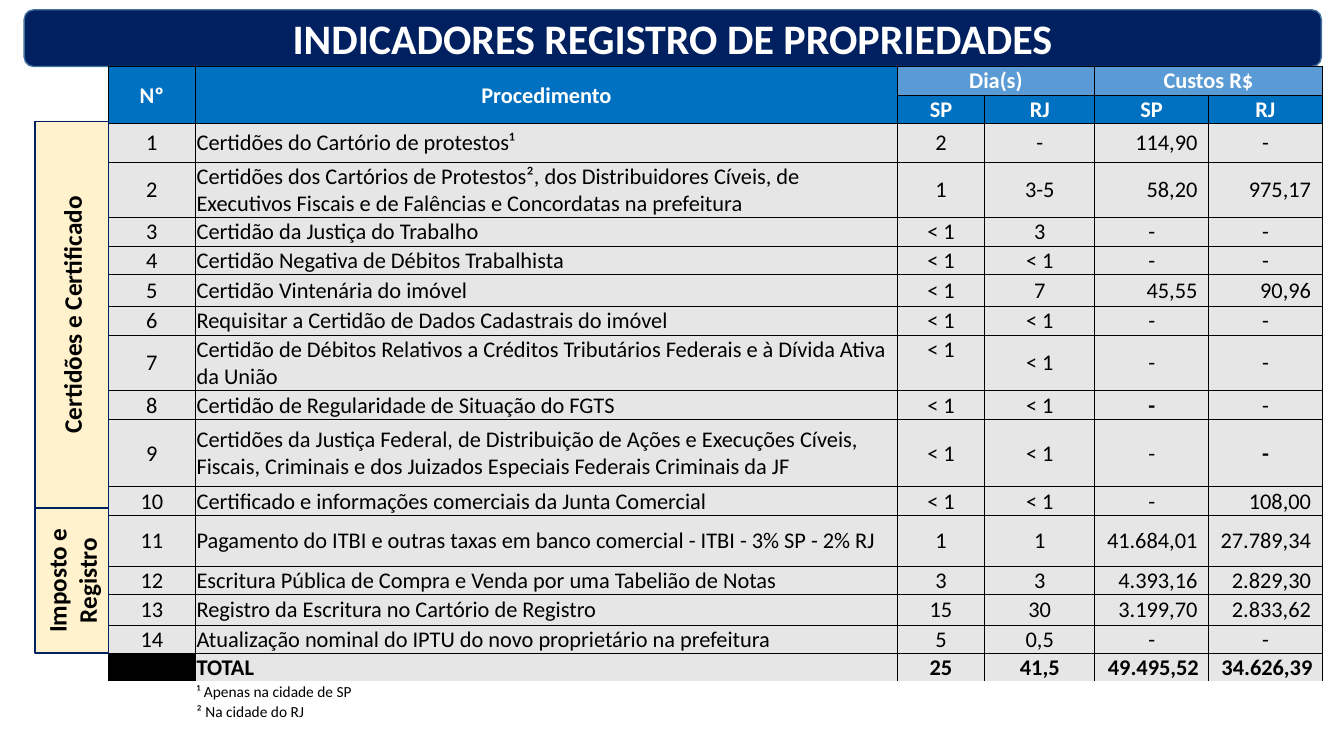
from lxml import etree
from pptx import Presentation
from pptx.dml.color import RGBColor
from pptx.enum.shapes import MSO_SHAPE
from pptx.enum.text import MSO_ANCHOR, PP_ALIGN
from pptx.oxml.ns import qn
from pptx.util import Pt

NAVY = RGBColor(0x00, 0x20, 0x60)
STEEL = RGBColor(0x43, 0x73, 0x9E)
BLUE = RGBColor(0x00, 0x70, 0xC0)
LIGHT_BLUE = RGBColor(0x5B, 0x9B, 0xD5)
GREY = RGBColor(0xE7, 0xE6, 0xE6)
CREAM = RGBColor(0xFF, 0xF2, 0xCC)
BLACK = RGBColor(0x00, 0x00, 0x00)
WHITE = RGBColor(0xFF, 0xFF, 0xFF)
FONT = "Calibri"

COLUMN_WIDTHS = [62.6, 501.1, 62.6, 78.5, 81.4, 81.1]
LINE = 19.65  # height of a row with one line of text
NOTE = 13.7
ROW_HEIGHTS = [LINE, LINE, 27.5, 39.3, LINE, LINE, 23, LINE, 39.3, LINE, 48.3,
               20.2, 36.3, LINE, 22, LINE, LINE, NOTE, NOTE]

# Procedure, days in SP and RJ, costs in SP and RJ
PROCEDURES = [
    ("Certidões do Cartório de protestos¹", "2", "-", "114,90", "-"),
    ("Certidões dos Cartórios de Protestos², dos Distribuidores Cíveis, de "
     "Executivos Fiscais e de Falências e Concordatas na prefeitura",
     "1", "3-5", "58,20", "975,17"),
    ("Certidão da Justiça do Trabalho", "< 1", "3", "-", "-"),
    ("Certidão Negativa de Débitos Trabalhista", "< 1", "< 1", "-", "-"),
    ("Certidão Vintenária do imóvel", "< 1", "7", "45,55", "90,96"),
    ("Requisitar a Certidão de Dados Cadastrais do imóvel", "< 1", "< 1", "-", "-"),
    ("Certidão de Débitos Relativos a Créditos Tributários Federais e à "
     "Dívida Ativa da União", "< 1", "< 1", "-", "-"),
    ("Certidão de Regularidade de Situação do FGTS", "< 1", "< 1", "-", "-"),
    ("Certidões da Justiça Federal, de Distribuição de Ações e Execuções "
     "Cíveis, Fiscais, Criminais e dos Juizados Especiais Federais Criminais da JF",
     "< 1", "< 1", "-", "-"),
    ("Certificado e informações comerciais da Junta Comercial",
     "< 1", "< 1", "-", "108,00"),
    ("Pagamento do ITBI e outras taxas em banco comercial - ITBI - 3% SP - 2% RJ",
     "1", "1", "41.684,01", "27.789,34"),
    ("Escritura Pública de Compra e Venda por uma Tabelião de Notas",
     "3", "3", "4.393,16", "2.829,30"),
    ("Registro da Escritura no Cartório de Registro",
     "15", "30", "3.199,70", "2.833,62"),
    ("Atualização nominal do IPTU do novo proprietário na prefeitura",
     "5", "0,5", "-", "-"),
]
TOTAL = ("TOTAL", "25", "41,5", "49.495,52", "34.626,39")
NOTES = ["¹ Apenas na cidade de SP", "² Na cidade do RJ"]
BOLD_DASHES = {(9, 4), (10, 5)}
TOP_CELL = (8, 2)


def write_text(text_frame, text, size, color, bold, alignment=PP_ALIGN.CENTER):
    text_frame.text = text
    paragraph = text_frame.paragraphs[0]
    paragraph.alignment = alignment
    for run in paragraph.runs:
        run.font.name = FONT
        run.font.size = Pt(size)
        run.font.bold = bold
        run.font.color.rgb = color


def add_box(slide, kind, bounds, fill, line, text, size, color, vertical=False):
    shape = slide.shapes.add_shape(kind, *[Pt(length) for length in bounds])
    shape.shadow.inherit = False
    shape.fill.solid()
    shape.fill.fore_color.rgb = fill
    shape.line.color.rgb = line
    shape.line.width = Pt(1)
    text_frame = shape.text_frame
    text_frame.word_wrap = True
    text_frame.vertical_anchor = MSO_ANCHOR.MIDDLE
    write_text(text_frame, text, size, color, True)
    if vertical:
        text_frame._txBody.bodyPr.set("vert", "vert270")


def add_borders(cell):
    properties = cell._tc.get_or_add_tcPr()
    for side in ("lnL", "lnR", "lnT", "lnB"):
        border = etree.SubElement(properties, qn(f"a:{side}"), w=str(Pt(0.5)))
        fill = etree.SubElement(border, qn("a:solidFill"))
        etree.SubElement(fill, qn("a:srgbClr"), val=str(BLACK))


def style_cell(cell, fill, bordered=True):
    cell.margin_left = cell.margin_right = cell.margin_top = Pt(0.7)
    cell.margin_bottom = Pt(0)
    cell.vertical_anchor = MSO_ANCHOR.MIDDLE
    if bordered:
        add_borders(cell)
    cell.fill.solid()
    cell.fill.fore_color.rgb = fill
    # Small text size keeps empty cells from stretching their row
    paragraph = cell.text_frame.paragraphs[0]
    etree.SubElement(paragraph._p, qn("a:endParaRPr"), sz="1100")


def fill_header(table):
    for row in range(2):
        for column in range(6):
            light = row == 0 and column > 1
            style_cell(table.cell(row, column), LIGHT_BLUE if light else BLUE)
    for column in (0, 1):
        table.cell(0, column).merge(table.cell(1, column))
    for column in (2, 4):
        table.cell(0, column).merge(table.cell(0, column + 1))
    labels = {(0, 0): "Nº", (0, 1): "Procedimento", (0, 2): "Dia(s)", (0, 4): "Custos R$"}
    labels.update({(1, column): "RJ" if column % 2 else "SP" for column in range(2, 6)})
    for position, label in labels.items():
        write_text(table.cell(*position).text_frame, label, 16, WHITE, True)


def fill_row(table, row, values, bold=False):
    for column, value in enumerate(values):
        cell = table.cell(row, column)
        style_cell(cell, GREY if value else BLACK)
        alignment = PP_ALIGN.LEFT if column == 1 else PP_ALIGN.CENTER
        if column > 3 and value != "-":
            alignment = PP_ALIGN.RIGHT
            cell.margin_right = Pt(7 if bold else 8)
        if (row, column) == TOP_CELL:
            cell.vertical_anchor = MSO_ANCHOR.TOP
        if value:
            is_bold = bold or (row, column) in BOLD_DASHES
            write_text(cell.text_frame, value, 16, BLACK, is_bold, alignment)


def add_indicator_table(slide):
    frame = slide.shapes.add_table(len(ROW_HEIGHTS), len(COLUMN_WIDTHS), Pt(77.2), Pt(47.6),
                                   Pt(sum(COLUMN_WIDTHS)), Pt(sum(ROW_HEIGHTS)))
    table = frame.table
    table.first_row = table.horz_banding = False
    for column, width in zip(table.columns, COLUMN_WIDTHS):
        column.width = Pt(width)
    for row, height in zip(table.rows, ROW_HEIGHTS):
        row.height = Pt(height)

    fill_header(table)
    for number, values in enumerate(PROCEDURES, 1):
        fill_row(table, number + 1, (str(number), *values))
    total_row = len(PROCEDURES) + 2
    fill_row(table, total_row, ("", *TOTAL), bold=True)

    # Footnotes below the total
    for row, note in enumerate(NOTES, total_row + 1):
        for column in range(6):
            style_cell(table.cell(row, column), WHITE, bordered=False)
        write_text(table.cell(row, 1).text_frame, note, 11, BLACK, False, PP_ALIGN.LEFT)


def main():
    presentation = Presentation()
    presentation.slide_width, presentation.slide_height = Pt(960), Pt(540)
    slide = presentation.slides.add_slide(presentation.slide_layouts[6])

    # Title banner
    add_box(slide, MSO_SHAPE.ROUNDED_RECTANGLE, (17.3, 7, 926.6, 40.5), NAVY, STEEL,
            "INDICADORES REGISTRO DE PROPRIEDADES", 30, WHITE)

    add_indicator_table(slide)

    # Stage labels beside the table
    for top, height, label in ((87, 276, "Certidões e Certificado"),
                               (363, 103.5, "Imposto e Registro")):
        add_box(slide, MSO_SHAPE.RECTANGLE, (25, top, 52.5, height), CREAM, NAVY,
                label, 18, BLACK, vertical=True)

    presentation.save("out.pptx")


if __name__ == "__main__":
    main()
